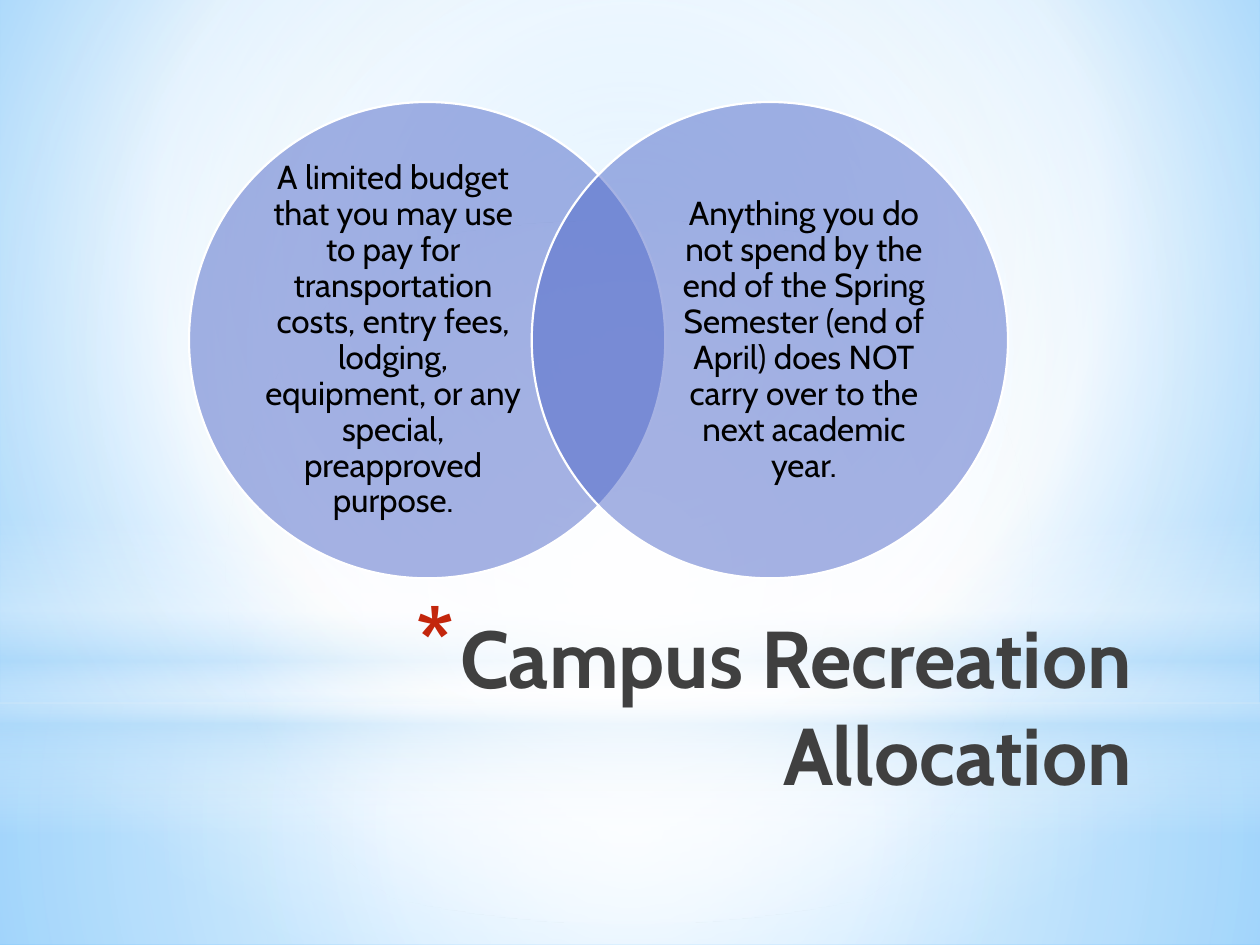
"""Build the campus recreation allocation slide with two overlapping circles."""
from lxml.etree import SubElement
from pptx import Presentation
from pptx.enum.shapes import MSO_SHAPE
from pptx.enum.text import MSO_ANCHOR, PP_ALIGN
from pptx.oxml.ns import qn
from pptx.oxml.xmlchemy import OxmlElement
from pptx.util import Inches, Pt


def paint(parent, *stops, position=0, focus=None, angle=90):
    """Insert a solid fill for one (place, hex, opacity) stop, else a gradient."""
    fill = OxmlElement("a:solidFill" if len(stops) == 1 else "a:gradFill")
    parent.insert(position, fill)
    holder = fill if len(stops) == 1 else SubElement(fill, qn("a:gsLst"))
    for place, color, opacity in stops:
        target = holder
        if len(stops) > 1:
            target = SubElement(holder, qn("a:gs"), pos=str(place * 1000))
        tint = SubElement(target, qn("a:srgbClr"), val=color)
        if opacity < 100:
            SubElement(tint, qn("a:alpha"), val=str(opacity * 1000))
    if focus:
        route = SubElement(fill, qn("a:path"))
        route.set("path", "circle")
        sides = {side: str(share * 1000) for side, share in zip("ltrb", focus)}
        SubElement(route, qn("a:fillToRect"), **sides)
    elif len(stops) > 1:
        SubElement(fill, qn("a:lin"), ang=str(angle * 60000), scaled="0")


def write(page, area, text, size, color, bold=False, align=PP_ALIGN.CENTER,
          anchor=MSO_ANCHOR.MIDDLE, spacing=None, margins=(0, 0)):
    """Add a wrapped text box and return its paragraph."""
    frame = page.shapes.add_textbox(*area).text_frame
    frame.word_wrap = True
    frame.vertical_anchor = anchor
    frame.margin_left = frame.margin_right = Inches(margins[0])
    frame.margin_top = frame.margin_bottom = Inches(margins[1])
    para = frame.paragraphs[0]
    para.alignment = align
    para.line_spacing = spacing
    span = para.add_run()
    span.text = text
    span.font.name = "Cabin"
    span.font.size = Pt(size)
    span.font.bold = bold
    paint(span._r.get_or_add_rPr(), (0, color, 100))
    return para


deck = Presentation()
deck.slide_width, deck.slide_height = Inches(10), Inches(7.5)
column, row = deck.slide_width // 100, deck.slide_height // 100
page = deck.slides.add_slide(deck.slide_layouts[6])

page.background.fill.solid()
backdrop = page._element.find(".//" + qn("p:bgPr"))
backdrop.remove(backdrop[0])
paint(backdrop, (0, "9ED5FF", 100), (60, "FFFFFF", 100), (100, "5BB9FF", 100),
      focus=(20, 10, 20, 60))

center = (50, 50, 50, 50)
horizon = 74.4
glows = [
    (MSO_SHAPE.RECTANGLE, horizon, 100 - horizon, center,
     [(0, "FFFFFF", 91), (37, "FFFFFF", 76), (100, "B4DCFA", 79)]),
    (MSO_SHAPE.RECTANGLE, 0, horizon, center,
     [(0, "FFFFFF", 89), (48, "FFFFFF", 62), (100, "B4DCFA", 79)]),
    (MSO_SHAPE.RECTANGLE, 54.9, 33.3, None,
     [(0, "FFFFFF", 0), (29, "FFFFFF", 30), (45, "B4DCFA", 40),
      (55, "FFFFFF", 26), (65, "B4DCFA", 60), (100, "FFFFFF", 0)]),
    (MSO_SHAPE.OVAL, 23.3, horizon, center,
     [(0, "FFFFFF", 100), (56, "FFFFFF", 0)]),
]
for kind, top, height, focus, stops in glows:
    glow = page.shapes.add_shape(kind, 0, int(top * row), deck.slide_width, int(height * row))
    glow.shadow.inherit = False
    glow.line.fill.background()
    paint(glow._element.spPr, *stops, position=2, focus=focus)

title = write(page, (int(19.6 * column), int(63.7 * row), int(71.2 * column), int(16.7 * row)),
              "Campus Recreation Allocation", 46, "404040", bold=True,
              align=PP_ALIGN.RIGHT, anchor=MSO_ANCHOR.TOP, margins=(0.1, 0.05))
layout = title._p.get_or_add_pPr()
layout.set("marL", str(Inches(0.35)))
layout.set("indent", str(-Inches(0.35)))
paint_holder = SubElement(layout, qn("a:buClr"))
SubElement(paint_holder, qn("a:srgbClr"), val="C3260C")
SubElement(layout, qn("a:buSzPct"), val="128000")
SubElement(layout, qn("a:buChar"), char="*")

diameter = int(37.8 * column)
circles = [
    (15, 20.3, "A limited budget that you may use to pay for transportation costs, "
     "entry fees, lodging, equipment, or any special, preapproved purpose."),
    (42.2, 52.9, "Anything you do not spend by the end of the Spring Semester "
     "(end of April) does NOT carry over to the next academic year."),
]
for left, text_left, text in circles:
    circle = page.shapes.add_shape(MSO_SHAPE.OVAL, int(left * column), int(10.8 * row),
                                   diameter, diameter)
    circle.shadow.inherit = False
    circle.line.width = Pt(1.25)
    paint(circle.line._get_or_add_ln(), (0, "FFFFFF", 100))
    paint(circle._element.spPr, (0, "4E67C8", 50), position=2)
    write(page, (int(text_left * column), int(16.8 * row), int(21.8 * column), int(38.5 * row)),
          text, 19, "000000", spacing=0.9)

deck.save("out.pptx")
